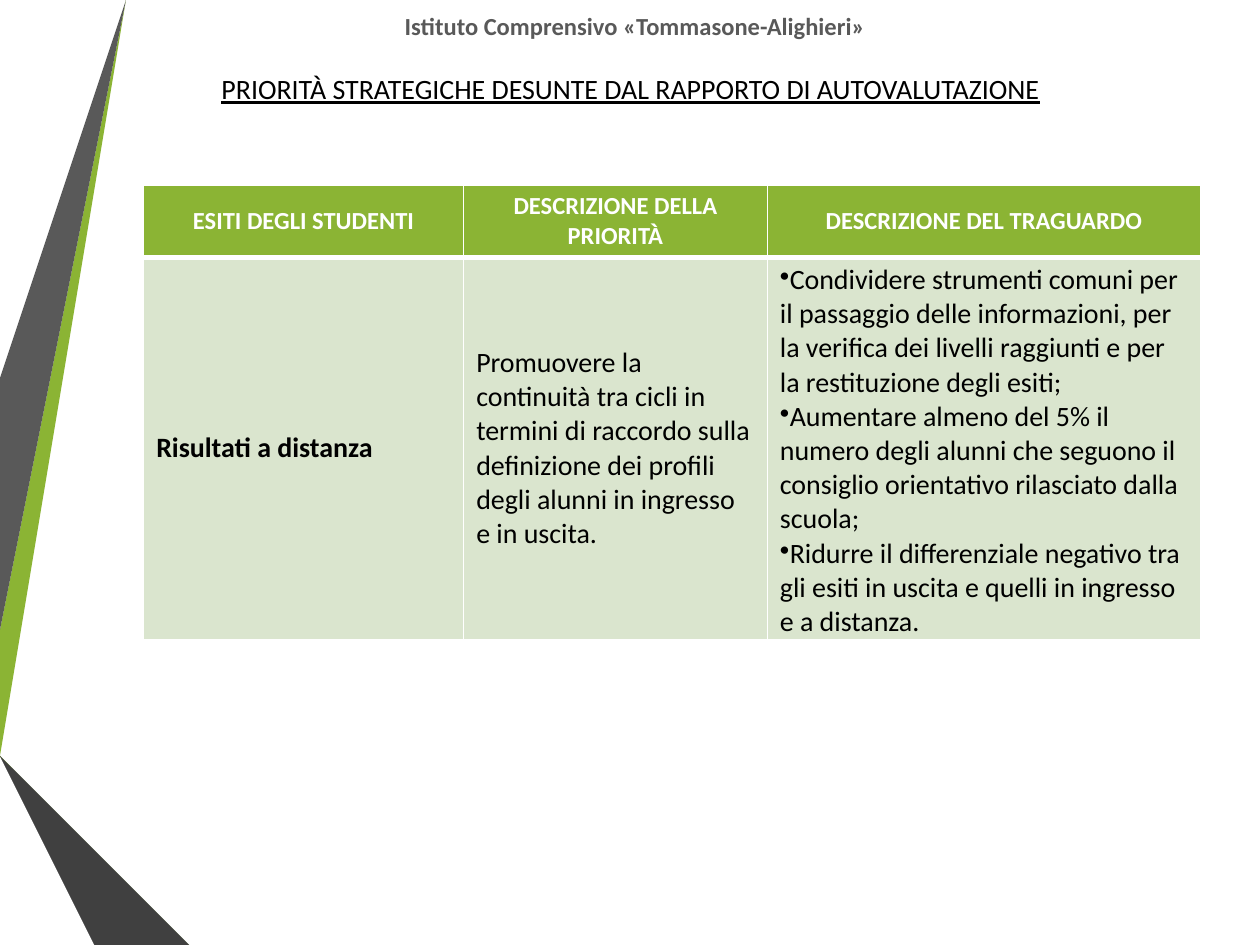
"""Builds a slide with the strategic priorities table of a school."""
from lxml import etree
from pptx import Presentation
from pptx import util as u
from pptx.dml.color import RGBColor
from pptx.enum import text
from pptx.oxml.ns import qn

WHITE = RGBColor(0xFF, 0xFF, 0xFF)
BLACK = RGBColor(0, 0, 0)
GREEN = RGBColor(0x8B, 0xB4, 0x34)
MID_GREEN = RGBColor(0x68, 0x87, 0x27)
DARK_GREEN = RGBColor(0x46, 0x5A, 0x1A)
PALE_GREEN = RGBColor(0xDA, 0xE5, 0xCE)
GREY = RGBColor(0x59, 0x59, 0x59)
DARK_GREY = RGBColor(0x40, 0x40, 0x40)
NEAR_BLACK = RGBColor(0x26, 0x26, 0x26)
FONT = "Calibri"
W, H = 10, 7.5

RIBBONS = [
    (GREEN, [(0, 5.44), (0, 5.75), (0.22, 5.79), (1.17, 0), (0.89, 0)]),
    (GREY, [(0.83, 0), (0.55, 0), (0, 3.36), (0, 5.06)]),
    (NEAR_BLACK, [(0, 6.19), (0, 6.21), (0.93, H), (0.99, H)]),
    (DARK_GREEN, [(0, 5.79), (0, 5.8), (1.56, H), (1.63, H)]),
    (MID_GREEN, [(0, 5.79), (1.63, H), (2.33, H), (0.22, 5.79), (0, 5.75)]),
    (DARK_GREY, [(0, 6.19), (0.99, H), (1.51, H), (0, 5.86)]),
]
TITLES = [
    ("Istituto Comprensivo «Tommasone-Alighieri»",
     (1.14, 0.04, 7.8, 0.34), dict(size=14, color=GREY, bold=True)),
    ("PRIORITÀ STRATEGICHE DESUNTE DAL RAPPORTO DI AUTOVALUTAZIONE",
     (0.91, 0.52, 8.19, 0.37), dict(size=16, color=BLACK, underline=True)),
]
HEADERS = ["ESITI DEGLI STUDENTI", "DESCRIZIONE DELLA PRIORITÀ",
           "DESCRIZIONE DEL TRAGUARDO"]
BODY = [
    ["Risultati a distanza"],
    ["Promuovere la continuità tra cicli in termini di raccordo sulla "
     "definizione dei profili degli alunni in ingresso e in uscita."],
    ["Condividere strumenti comuni per il passaggio delle informazioni, per "
     "la verifica dei livelli raggiunti e per la restituzione degli esiti;",
     "Aumentare almeno del 5% il numero degli alunni che seguono il consiglio "
     "orientativo rilasciato dalla scuola;",
     "Ridurre il differenziale negativo tra gli esiti in uscita e quelli in "
     "ingresso e a distanza."],
]
TABLE_LEFT, TABLE_TOP = 1.14, 1.47
COLS = [2.54, 2.41, 3.44]
ROWS = [0.57, 3.03]


def style(p, size, color, bold=False, underline=None, align=None):
    f = p.font
    f.name, f.size, f.bold, f.underline = FONT, u.Pt(size), bold, underline
    f.color.rgb = color
    p.alignment = align


def add_ribbon(s, color, points):
    fb = s.shapes.build_freeform(*points[0], scale=u.Inches(1))
    fb.add_line_segments(points[1:], close=True)
    sp = fb.convert_to_shape()
    sp.shadow.inherit = False
    sp.fill.solid()
    sp.fill.fore_color.rgb = color
    sp.line.fill.background()


def add_title(s, words, box, look):
    tf = s.shapes.add_textbox(*map(u.Inches, box)).text_frame
    tf.word_wrap = True
    tf.text = words
    style(tf.paragraphs[0], align=text.PP_ALIGN.CENTER, **look)


def set_borders(cell, bottom):
    pr = cell._tc.get_or_add_tcPr()
    widths = dict(lnL=1, lnR=1, lnT=1, lnB=bottom)
    for i, (tag, width) in enumerate(widths.items()):
        ln = etree.Element(qn("a:" + tag), w=str(u.Pt(width)))
        fill = etree.SubElement(ln, qn("a:solidFill"))
        etree.SubElement(fill, qn("a:srgbClr"), val=str(WHITE))
        pr.insert(i, ln)


def fill_cell(cell, lines, fill, bottom, look):
    cell.fill.solid()
    cell.fill.fore_color.rgb = fill
    cell.vertical_anchor = text.MSO_ANCHOR.MIDDLE
    set_borders(cell, bottom)
    tf = cell.text_frame
    tf.text = "\n".join(lines)
    for p in tf.paragraphs:
        if len(lines) > 1:
            etree.SubElement(p._p.get_or_add_pPr(), qn("a:buChar"), char="•")
        style(p, **look)


def add_priorities(s):
    box = (TABLE_LEFT, TABLE_TOP, sum(COLS), sum(ROWS))
    table = s.shapes.add_table(
        len(ROWS), len(COLS), *map(u.Inches, box)).table
    for row, height in zip(table.rows, ROWS):
        row.height = u.Inches(height)
    for c, width in enumerate(COLS):
        table.columns[c].width = u.Inches(width)
        fill_cell(table.cell(0, c), [HEADERS[c]], GREEN, 3, dict(
            size=14, color=WHITE, bold=True, align=text.PP_ALIGN.CENTER))
        fill_cell(table.cell(1, c), BODY[c], PALE_GREEN, 1, dict(
            size=16, color=BLACK, bold=c == 0))
    goals = table.cell(1, len(COLS) - 1)
    goals.margin_top, goals.margin_bottom = u.Inches(0.04), 0


def main():
    prs = Presentation()
    prs.slide_width, prs.slide_height = u.Inches(W), u.Inches(H)
    s = prs.slides.add_slide(prs.slide_layouts[6])
    for ribbon in RIBBONS:
        add_ribbon(s, *ribbon)
    add_priorities(s)
    for title in TITLES:
        add_title(s, *title)
    prs.save("out.pptx")


if __name__ == "__main__":
    main()
